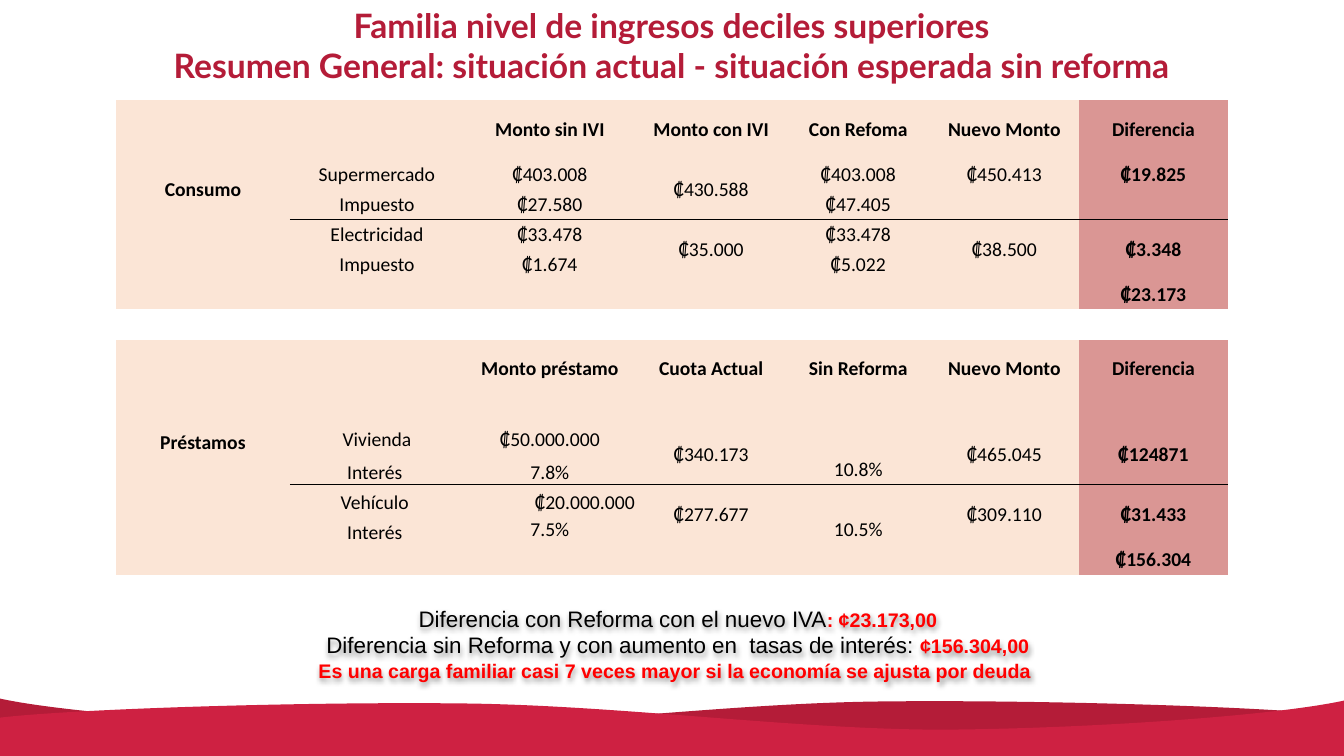
from lxml.etree import SubElement
from pptx import Presentation
from pptx.dml.color import RGBColor
from pptx.enum.text import MSO_ANCHOR, MSO_AUTO_SIZE, PP_ALIGN
from pptx.oxml import parse_xml
from pptx.oxml.ns import nsdecls, qn
from pptx.util import Pt

CRIMSON = RGBColor(0xB4, 0x1C, 0x38)
BRIGHT_CRIMSON = RGBColor(0xCE, 0x21, 0x42)
PEACH = RGBColor(0xFB, 0xE5, 0xD6)
ROSE = RGBColor(0xDA, 0x96, 0x94)
BLACK = RGBColor(0, 0, 0)
RED = RGBColor(0xFF, 0, 0)

WIDTH, HEIGHT = 960, 540
PLAIN_TABLE_STYLE = "{2D5ABB26-0587-4C30-8999-92F81FD0307C}"

# Upper edge of the footer wave: a start point, then Bézier segments
WAVE_EDGE = [
    (960, 511.2),
    (904.3, 504.7), (738.7, 499.7), (626.4, 501.1),
    (514.8, 502.6), (391, 519.8), (286.6, 519.8),
    (182.2, 519.1), (49, 509.8), (0, 499),
]

HEADLINE = ("Familia nivel de ingresos deciles superiores\n"
            "Resumen General: situación actual - situación esperada sin reforma")

BUDGET = [
    ["Consumo", "", "Monto sin IVI", "Monto con IVI", "Con Refoma", "Nuevo Monto", "Diferencia"],
    ["", "Supermercado", "₡403.008", "₡430.588", "₡403.008", "₡450.413", "₡19.825"],
    ["", "Impuesto", "₡27.580", "", "₡47.405", "", ""],
    ["", "Electricidad", "₡33.478", "₡35.000", "₡33.478", "₡38.500", "₡3.348"],
    ["", "Impuesto", "₡1.674", "", "₡5.022", "", ""],
    ["", "", "", "", "", "", "₡23.173"],
    [""] * 7,
    ["Préstamos", "", "Monto préstamo", "Cuota Actual", "Sin Reforma", "Nuevo Monto", "Diferencia"],
    [""] * 7,
    ["", "Vivienda", "₡50.000.000", "₡340.173", "", "₡465.045", "₡124871"],
    ["", "Interés ", "7.8%", "", "10.8%", "", ""],
    ["", "Vehículo ", "₡20.000.000", "₡277.677", "", "₡309.110", "₡31.433"],
    ["", "Interés ", "7.5%", "", "10.5%", "", ""],
    ["", "", "", "", "", "", "₡156.304"],
]
COLUMN_WIDTHS = [124, 124.6, 122.4, 108, 102.2, 106.5, 106.5]
ROW = 21.43
ROW_HEIGHTS = [42.4] + [ROW] * 5 + [21.9, 41, 19.7] + [ROW] * 5
HEADER_ROWS = (0, 7)
GAP_ROW = 6
RULED_ROWS = (2, 10)
DIFFERENCE_COLUMN = 6
# (first row, last row, column)
MERGES = [(0, 4, 0), (7, 12, 0), (1, 2, 3)]
MERGES += [(top, top + 1, column) for top in (3, 9, 11) for column in (3, 5, 6)]
LOW_CELLS = [(10, 1), (10, 2), (11, 1), (11, 2), (12, 1)]
RIGHT_CELLS = [(11, 2)]

# Each line holds (text, emphasised) pieces
CONCLUSIONS = [
    [("Diferencia con Reforma con el nuevo IVA", False), (": ¢23.173,00", True)],
    [("Diferencia sin Reforma y con aumento en  tasas de interés: ", False),
     ("¢156.304,00", True)],
    [("Es una carga familiar casi 7 veces mayor si la economía se ajusta por deuda ", True)],
]


class BudgetSlide:
    def __init__(self, presentation):
        self.slide = presentation.slides.add_slide(presentation.slide_layouts[5])
        self.shapes = self.slide.shapes

    def style(self, run, font, size, color, bold=False):
        run.font.name = font
        run.font.size = Pt(size)
        run.font.bold = bold
        run.font.color.rgb = color

    def wave(self, edge, color):
        edge = [(Pt(x), Pt(y)) for x, y in edge]
        anchors = edge[::3]
        corners = [(anchors[-1][0], Pt(HEIGHT)), (anchors[0][0], Pt(HEIGHT))]
        builder = self.shapes.build_freeform(*anchors[0], scale=1.0)
        builder.add_line_segments(anchors[1:] + corners, close=True)
        wave = builder.convert_to_shape()
        # Bend the upper segments by giving each its two control points
        segments = list(wave._element.iter(qn("a:lnTo")))[:len(anchors) - 1]
        for index, segment in enumerate(segments):
            first = 3 * index + 1
            points = "".join(f'<a:pt x="{x - wave.left}" y="{y - wave.top}"/>'
                             for x, y in edge[first:first + 3])
            curve = parse_xml(f'<a:cubicBezTo {nsdecls("a")}>{points}</a:cubicBezTo>')
            segment.getparent().replace(segment, curve)
        wave.shadow.inherit = False
        wave.fill.solid()
        wave.fill.fore_color.rgb = color
        wave.line.fill.background()

    def title(self, text, left, top, width, height):
        title = self.shapes.title
        title.left, title.top, title.width, title.height = map(Pt, (left, top, width, height))
        frame = title.text_frame
        frame.text = text
        frame.word_wrap = True
        frame.auto_size = MSO_AUTO_SIZE.NONE
        frame.vertical_anchor = MSO_ANCHOR.TOP
        for paragraph in frame.paragraphs:
            paragraph.alignment = PP_ALIGN.CENTER
            self.style(paragraph.runs[0], "Lato", 24, CRIMSON, True)

    def border(self, cell, side, visible=True):
        paint = (f'<a:solidFill><a:srgbClr val="{BLACK}"/></a:solidFill>'
                 if visible else '<a:noFill/>')
        line = parse_xml(f'<a:{side} {nsdecls("a")} w="6350">{paint}</a:{side}>')
        cell._tc.get_or_add_tcPr().insert(0, line)

    def cell(self, cell, text, row, column):
        cell.margin_left = cell.margin_right = cell.margin_top = Pt(0.5)
        cell.margin_bottom = 0
        low = (row, column) in LOW_CELLS
        cell.vertical_anchor = MSO_ANCHOR.BOTTOM if low else MSO_ANCHOR.MIDDLE
        if row == GAP_ROW:
            cell.fill.background()
        else:
            cell.fill.solid()
            cell.fill.fore_color.rgb = ROSE if column == DIFFERENCE_COLUMN else PEACH
        paragraph = cell.text_frame.paragraphs[0]
        if text:
            paragraph.text = text
            right = (row, column) in RIGHT_CELLS
            paragraph.alignment = PP_ALIGN.RIGHT if right else PP_ALIGN.CENTER
            bold = row in HEADER_ROWS or column in (0, DIFFERENCE_COLUMN)
            self.style(paragraph.runs[0], "Calibri", 14, BLACK, bold)
        else:
            # Keeps empty cells from stretching their row
            SubElement(paragraph._p, qn("a:endParaRPr")).set("sz", "1400")

    def table(self, rows, left, top):
        table = self.shapes.add_table(
            len(rows), len(COLUMN_WIDTHS), Pt(left), Pt(top),
            Pt(sum(COLUMN_WIDTHS)), Pt(sum(ROW_HEIGHTS))).table
        table.first_row = table.horz_banding = False
        table._tbl.tblPr.find(qn("a:tableStyleId")).text = PLAIN_TABLE_STYLE
        for column, width in zip(table.columns, COLUMN_WIDTHS):
            column.width = Pt(width)
        for row, height in zip(table.rows, ROW_HEIGHTS):
            row.height = Pt(height)
        for r, texts in enumerate(rows):
            for c, text in enumerate(texts):
                self.cell(table.cell(r, c), text, r, c)
        for r in RULED_ROWS:
            for c in range(1, len(COLUMN_WIDTHS)):
                self.border(table.cell(r, c), "lnB")
                self.border(table.cell(r + 1, c), "lnB", visible=False)
                self.border(table.cell(r + 1, c), "lnT")
        for first, last, column in MERGES:
            if last in RULED_ROWS:
                self.border(table.cell(first, column), "lnB")
                self.border(table.cell(first, column), "lnT", visible=False)
            table.cell(first, column).merge(table.cell(last, column))

    def shadowed_text(self, lines, left, top, width, height):
        box = self.shapes.add_textbox(*map(Pt, (left, top, width, height)))
        box._element.spPr.append(parse_xml(
            f'<a:effectLst {nsdecls("a")}><a:outerShdw blurRad="50800" dist="25400" '
            'dir="5400000" algn="t" rotWithShape="0"><a:prstClr val="black">'
            '<a:alpha val="40000"/></a:prstClr></a:outerShdw></a:effectLst>'))
        frame = box.text_frame
        frame.word_wrap = True
        for index, pieces in enumerate(lines):
            paragraph = frame.add_paragraph() if index else frame.paragraphs[0]
            paragraph.alignment = PP_ALIGN.CENTER
            for text, emphasised in pieces:
                run = paragraph.add_run()
                run.text = text
                size, color = (14, RED) if emphasised else (16, BLACK)
                self.style(run, "Arial", size, color, emphasised)


def main():
    presentation = Presentation()
    presentation.slide_width, presentation.slide_height = Pt(WIDTH), Pt(HEIGHT)
    summary = BudgetSlide(presentation)

    # Footer waves: the front one mirrors the back one
    summary.wave(WAVE_EDGE, CRIMSON)
    summary.wave([(WIDTH - x, y + 1.4) for x, y in WAVE_EDGE], BRIGHT_CRIMSON)

    # Heading, budget table and conclusions
    summary.title(HEADLINE, 83, 0, 793.5, 65.5)
    summary.table(BUDGET, 83, 71.3)
    summary.shadowed_text(CONCLUSIONS, 166.3, 428.4, 635.8, 94.3)

    presentation.save("out.pptx")


if __name__ == "__main__":
    main()
